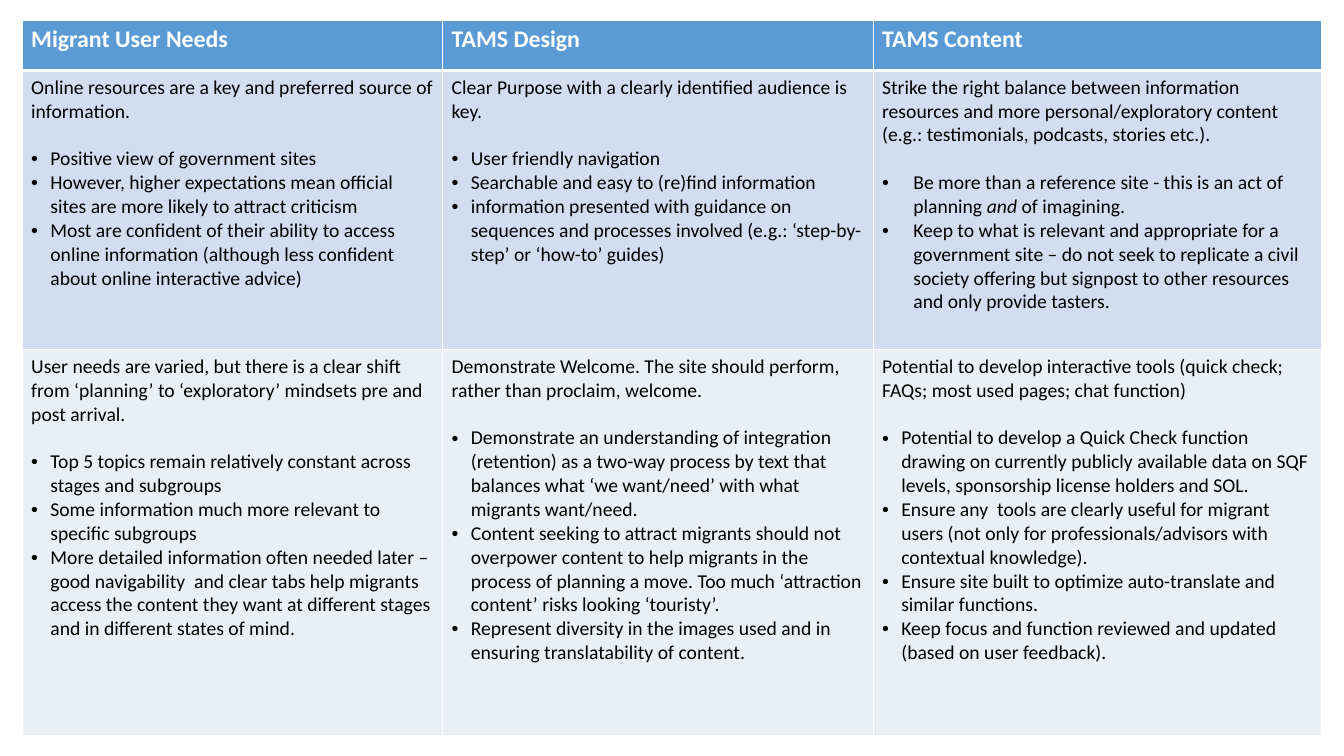
from lxml import etree
from pptx import Presentation
from pptx import util as u
from pptx.dml.color import RGBColor
from pptx.oxml.ns import qn

PX = 9144
COLORS = {"header": "5B9BD5", "upper": "D2DEEF", "lower": "EAEFF7",
          "white": "FFFFFF", "black": "000000"}
COLUMNS = [417, 427, 445]
ROWS = [50, 277, 383]
ROW_FILLS = ["header", "upper", "lower"]
HEADINGS = ["Migrant User Needs", "TAMS Design", "TAMS Content"]
BODY = [
    [
        ("Online resources are a key and preferred source of information.", 19, [
            "Positive view of government sites",
            "However, higher expectations mean official sites are more likely to attract criticism",
            "Most are confident of their ability to access online information "
            "(although less confident about online interactive advice)",
        ]),
        ("Clear Purpose with a clearly identified audience is key.", 19, [
            "User friendly navigation",
            "Searchable and easy to (re)find information",
            "information presented with guidance on sequences and processes involved "
            "(e.g.: ‘step-by-step’ or ‘how-to’ guides)",
        ]),
        ("Strike the right balance between information resources and more "
         "personal/exploratory content (e.g.: testimonials, podcasts, stories etc.).", 31, [
            "Be more than a reference site - this is an act of planning *and* of imagining.",
            "Keep to what is relevant and appropriate for a government site – do not seek to "
            "replicate a civil society offering but signpost to other resources and only "
            "provide tasters.",
        ]),
    ],
    [
        ("User needs are varied, but there is a clear shift from ‘planning’ to "
         "‘exploratory’ mindsets pre and post arrival.", 19, [
            "Top 5 topics remain relatively constant across stages and subgroups",
            "Some information much more relevant to specific subgroups",
            "More detailed information often needed later –good navigability  and clear tabs "
            "help migrants access the content they want at different stages and in different "
            "states of mind.",
        ]),
        ("Demonstrate Welcome. The site should perform, rather than proclaim, welcome.", 19, [
            "Demonstrate an understanding of integration (retention) as a two-way process by "
            "text that balances what ‘we want/need’ with what migrants want/need.",
            "Content seeking to attract migrants should not overpower content to help migrants "
            "in the process of planning a move. Too much ‘attraction content’ risks looking "
            "‘touristy’.",
            "Represent diversity in the images used and in ensuring translatability of content.",
        ]),
        ("Potential to develop interactive tools (quick check; FAQs; most used pages; "
         "chat function)", 19, [
            "Potential to develop a Quick Check function drawing on currently publicly available "
            "data on SQF levels, sponsorship license holders and SOL.",
            "Ensure any  tools are clearly useful for migrant users (not only for "
            "professionals/advisors with contextual knowledge).",
            "Ensure site built to optimize auto-translate and similar functions.",
            "Keep focus and function reviewed and updated (based on user feedback).",
        ]),
    ],
]


def px(n):
    return u.Emu(n * PX)


def rgb(name):
    return RGBColor.from_string(COLORS[name])


def write(p, content, size=14, color="black", bold=False, after=0, indent=0):
    p.space_after = u.Pt(after)
    for i, part in enumerate(content.split("*")):
        r = p.add_run()
        r.text = part
        r.font.name = "Calibri"
        r.font.size = u.Pt(size)
        r.font.bold = bold
        r.font.italic = i % 2 == 1
        r.font.color.rgb = rgb(color)
    if indent:
        pPr = p._p.get_or_add_pPr()
        pPr.set("marL", str(px(indent)))
        pPr.set("indent", str(-px(indent)))
        etree.SubElement(pPr, qn("a:buFont"), typeface="Arial")
        etree.SubElement(pPr, qn("a:buChar"), char="•")


def add_border(cell, side, width):
    tcPr = cell._tc.get_or_add_tcPr()
    ln = etree.SubElement(tcPr, qn(f"a:ln{side}"), w=str(u.Pt(width)))
    fill = etree.SubElement(ln, qn("a:solidFill"))
    etree.SubElement(fill, qn("a:srgbClr"), val=COLORS["white"])


def format_cell(cell, row):
    cell.margin_left = cell.margin_right = px(9)
    cell.margin_top = cell.margin_bottom = px(5)
    for side in "LRTB":
        under_header = (row, side) in [(0, "B"), (1, "T")]
        add_border(cell, side, 3 if under_header else 1)
    cell.fill.solid()
    cell.fill.fore_color.rgb = rgb(ROW_FILLS[row])


def fill_body_cell(cell, intro, indent, points):
    tf = cell.text_frame
    write(tf.paragraphs[0], intro, after=17)
    for point in points:
        write(tf.add_paragraph(), point, indent=indent)


def add_needs_table(s):
    table = s.shapes.add_table(len(ROWS), len(COLUMNS), px(22), px(20),
                               px(sum(COLUMNS)), px(sum(ROWS))).table
    for column, width in zip(table.columns, COLUMNS):
        column.width = px(width)
    for i, height in enumerate(ROWS):
        table.rows[i].height = px(height)
        for j in range(len(COLUMNS)):
            cell = table.cell(i, j)
            format_cell(cell, i)
            if i == 0:
                write(cell.text_frame.paragraphs[0], HEADINGS[j],
                      size=17, color="white", bold=True)
            else:
                fill_body_cell(cell, *BODY[i - 1][j])


def main():
    prs = Presentation()
    prs.slide_width, prs.slide_height = px(1333), px(750)
    s = prs.slides.add_slide(prs.slide_layouts[6])
    add_needs_table(s)
    prs.save("out.pptx")


if __name__ == "__main__":
    main()
